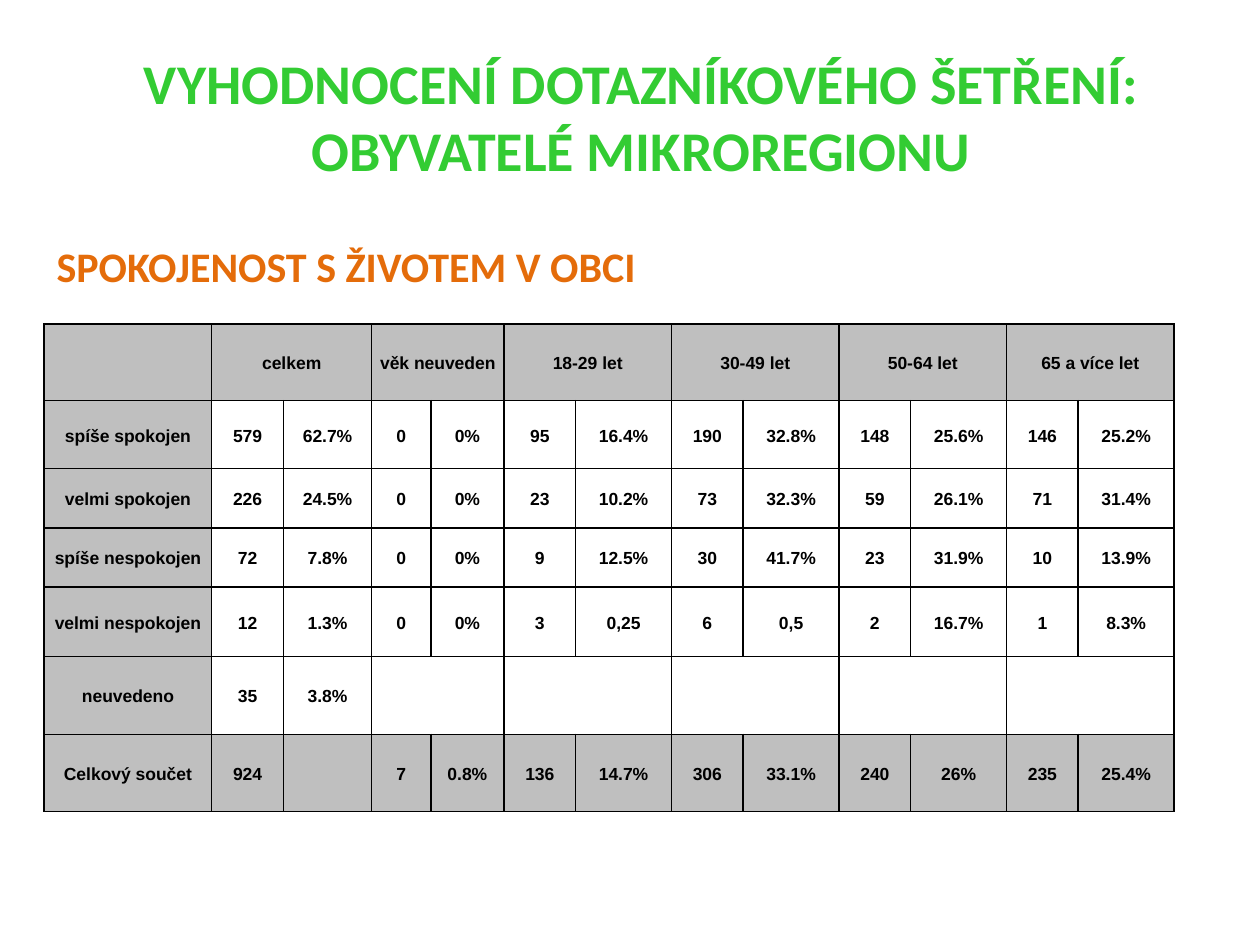
from lxml import etree
from pptx import Presentation
from pptx.dml.color import RGBColor
from pptx.enum.text import MSO_ANCHOR, MSO_AUTO_SIZE, PP_ALIGN
from pptx.oxml.ns import qn
from pptx.util import Inches, Pt

CENTER, MIDDLE = PP_ALIGN.CENTER, MSO_ANCHOR.MIDDLE
NO_FIT, GROW = MSO_AUTO_SIZE.NONE, MSO_AUTO_SIZE.SHAPE_TO_FIT_TEXT
COLORS = {"title": "33CC33", "heading": "E46C0A", "outline": "AA4214",
          "text": "000000", "border": "000000", "shade": "BFBFBF"}
FONTS = {
    "title": {"name": "Calibri", "size": Pt(32), "bold": True},
    "heading": {"name": "Calibri", "size": Pt(24), "bold": True},
    "text": {"name": "Arial", "size": Pt(10), "bold": True},
}
CELL = {"vertical_anchor": MIDDLE, "margin_left": Inches(0.05),
        "margin_right": Inches(0.05), "margin_top": 0, "margin_bottom": 0}
PARAGRAPH = {"alignment": CENTER, "line_spacing": 1.15}
COLS = [1.33, 0.57, 0.7, 0.47, 0.58] + [0.57, 0.76] * 4
ROWS = [0.61, 0.54, 0.47, 0.47, 0.55, 0.62, 0.61]
DATA = [row.split("|") for row in (
    "|celkem||věk neuveden||18-29 let||30-49 let||50-64 let||65 a více let|",
    "spíše spokojen|579|62.7%|0|0%|95|16.4%|190|32.8%|148|25.6%|146|25.2%",
    "velmi spokojen|226|24.5%|0|0%|23|10.2%|73|32.3%|59|26.1%|71|31.4%",
    "spíše nespokojen|72|7.8%|0|0%|9|12.5%|30|41.7%|23|31.9%|10|13.9%",
    "velmi nespokojen|12|1.3%|0|0%|3|0,25|6|0,5|2|16.7%|1|8.3%",
    "neuvedeno|35|3.8%||||||||||",
    "Celkový součet|924||7|0.8%|136|14.7%|306|33.1%|240|26%|235|25.4%",
)]
MERGED_FROM = {0: 1, 5: 3}


def set_all(obj, values):
    for name, value in values.items():
        setattr(obj, name, value)


def add_line(parent, tag, color, width):
    ln = etree.SubElement(parent, qn(tag), w=str(Pt(width)))
    fill = etree.SubElement(ln, qn("a:solidFill"))
    etree.SubElement(fill, qn("a:srgbClr"), val=COLORS[color])
    return ln


def format_runs(p, style):
    for r in p.runs:
        set_all(r.font, FONTS[style])
        r.font.color.rgb = RGBColor.from_string(COLORS[style])


def outline_runs(p):
    for r in p.runs:
        rPr = r.font._element
        rPr.insert(0, add_line(rPr, "a:ln", "outline", 0.71))


def add_title(s, text, box):
    sp = s.shapes.title
    set_all(sp, dict(zip(("left", "top", "width", "height"), map(Inches, box))))
    tf = sp.text_frame
    tf.text = text
    set_all(tf, {"auto_size": NO_FIT, "vertical_anchor": MIDDLE})
    p = tf.paragraphs[0]
    p.alignment = CENTER
    format_runs(p, "title")
    outline_runs(p)


def add_heading(s, text, box):
    tf = s.shapes.add_textbox(*map(Inches, box)).text_frame
    set_all(tf, {"word_wrap": False, "auto_size": GROW})
    p = tf.paragraphs[0]
    p.text = text
    format_runs(p, "heading")
    outline_runs(p)


def format_cell(cell, text, shaded):
    set_all(cell, CELL)
    tcPr = cell._tc.get_or_add_tcPr()
    for side in "LRTB":
        add_line(tcPr, f"a:ln{side}", "border", 1)
    if shaded:
        cell.fill.solid()
        cell.fill.fore_color.rgb = RGBColor.from_string(COLORS["shade"])
    else:
        cell.fill.background()
    if text:
        p = cell.text_frame.paragraphs[0]
        p.text = text
        set_all(p, PARAGRAPH)
        format_runs(p, "text")


def add_results(s, left, top):
    size = map(Inches, (left, top, sum(COLS), sum(ROWS)))
    table = s.shapes.add_table(len(ROWS), len(COLS), *size).table
    set_all(table, {"first_row": False, "horz_banding": False})
    for col, width in zip(table.columns, COLS):
        col.width = Inches(width)
    for row, height in zip(table.rows, ROWS):
        row.height = Inches(height)
    for i, values in enumerate(DATA):
        for j, text in enumerate(values):
            shaded = j == 0 or i in (0, len(ROWS) - 1)
            format_cell(table.cell(i, j), text, shaded)
    for i, first in MERGED_FROM.items():
        for j in range(first, len(COLS), 2):
            table.cell(i, j).merge(table.cell(i, j + 1))


def main():
    prs = Presentation()
    prs.slide_width, prs.slide_height = Inches(10), Inches(7.5)
    s = prs.slides.add_slide(prs.slide_layouts[5])
    add_title(s, "VYHODNOCENÍ DOTAZNÍKOVÉHO ŠETŘENÍ:\vOBYVATELÉ MIKROREGIONU",
              (0.59, 0.29, 9, 1.25))
    add_results(s, 0.35, 2.57)
    add_heading(s, "SPOKOJENOST S ŽIVOTEM V OBCI", (0.35, 1.86, 4.85, 0.5))
    prs.save("out.pptx")


if __name__ == "__main__":
    main()
